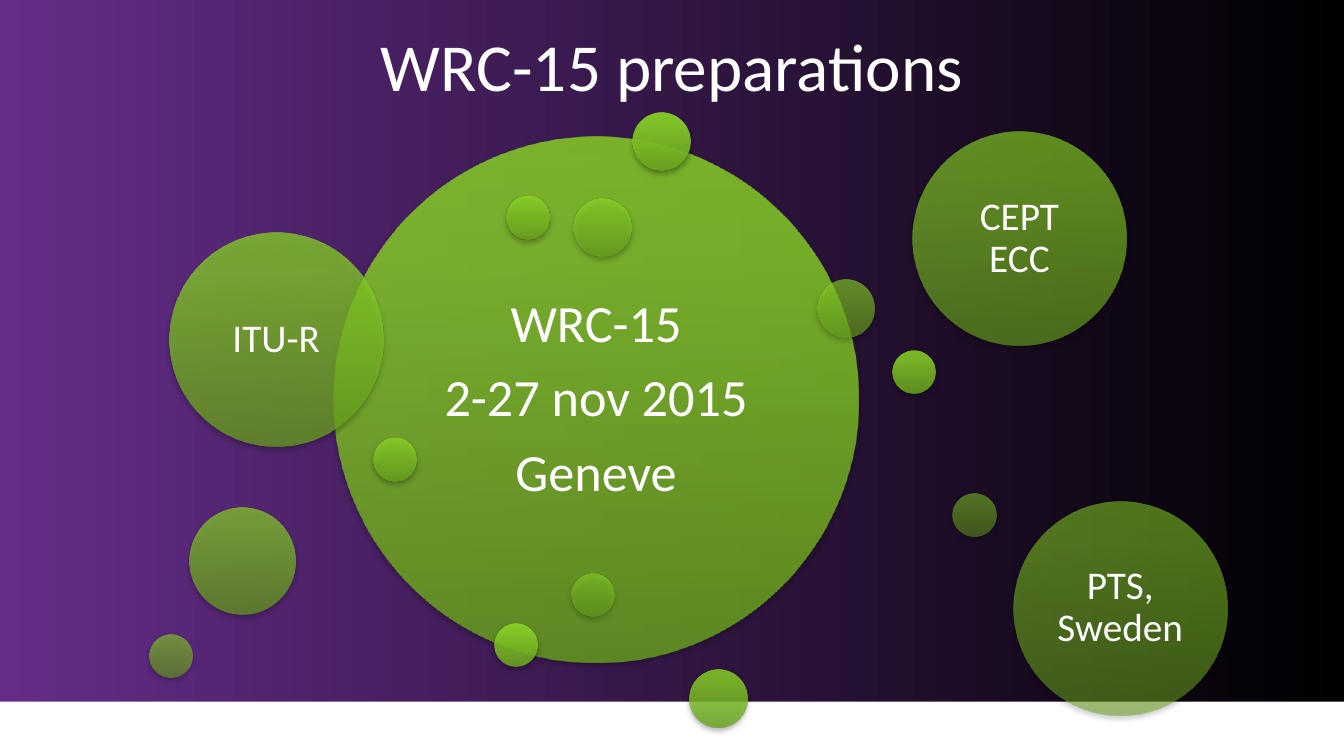
from pptx import Presentation
from pptx.dml.color import RGBColor
from pptx.enum.shapes import MSO_SHAPE
from pptx.enum.text import MSO_ANCHOR, PP_ALIGN
from pptx.oxml import parse_xml
from pptx.oxml.ns import nsdecls, qn
from pptx.util import Inches, Pt

OVAL, RECT = MSO_SHAPE.OVAL, MSO_SHAPE.RECTANGLE
CENTER, MIDDLE = PP_ALIGN.CENTER, MSO_ANCHOR.MIDDLE

WIDTH = Inches(10)
HEIGHT = WIDTH * 9 // 16
UNIT = WIDTH / 100  # the grid has 100 square columns
ROWS = HEIGHT / UNIT
FONT, WHITE = "Calibri", "FFFFFF"
GREENS = [(0, "6BA320"), (80, "8AD329"), (100, "8CD826")]
TINY, SMALL, MEDIUM, LARGE = 3.2, 4.3, 7.9, 15.9

HUB = (24.8, 10.2, 39.1)
HUB_ALPHA = 80
HUB_TEXT = ["WRC-15", "2-27 nov 2015", "Geneve"]

# column, row, size, text; they fade evenly from first to last
BUBBLES = [
    (47.1, 8.4, SMALL, ""),
    (36.8, 46.4, TINY, ""),
    (66.4, 26.1, TINY, ""),
    (51.3, 49.8, SMALL, ""),
    (37.7, 14.6, TINY, ""),
    (27.8, 32.6, TINY, ""),
    (12.6, 17.3, LARGE, "ITU-R"),
    (42.7, 14.8, SMALL, ""),
    (14.1, 37.8, MEDIUM, ""),
    (67.9, 9.8, LARGE, "CEPT ECC"),
    (60.8, 20.8, SMALL, ""),
    (11.1, 47.2, TINY, ""),
    (42.5, 42.7, TINY, ""),
    (75.4, 37.3, LARGE, "PTS, Sweden"),
    (70.9, 36.7, TINY, ""),
]
FADE = (90, 50)


def color(text):
    return RGBColor.from_string(text)


def grid(*cells):
    return [round(cell * UNIT) for cell in cells]


def write(frame, lines, size, inset):
    frame.word_wrap = True
    frame.margin_left = frame.margin_right = Inches(inset)
    frame.text = "\n".join(lines)
    for para in frame.paragraphs:
        para.alignment = CENTER
        for run in para.runs:
            run.font.size = Pt(size)
            run.font.name = FONT
            run.font.color.rgb = color(WHITE)


def shade(shape, alpha):
    """Give a bubble its see-through green gradient and soft shadow."""
    stops = "".join(
        f'<a:gs pos="{pos * 1000}"><a:srgbClr val="{tint}">'
        f'<a:alpha val="{round(alpha * 1000)}"/></a:srgbClr></a:gs>'
        for pos, tint in GREENS)
    shape.fill.gradient()
    props = shape._element.spPr
    props.replace(props.find(qn("a:gradFill")), parse_xml(
        f'<a:gradFill {nsdecls("a")} rotWithShape="1"><a:gsLst>{stops}</a:gsLst>'
        '<a:lin ang="16200000" scaled="0"/></a:gradFill>'))
    shape.line.fill.background()
    shape.shadow.inherit = False
    props.find(qn("a:effectLst")).append(parse_xml(
        f'<a:outerShdw {nsdecls("a")} blurRad="{Pt(3.1)}" dist="{Pt(1.8)}" '
        'dir="5400000" rotWithShape="0"><a:srgbClr val="000000">'
        '<a:alpha val="35000"/></a:srgbClr></a:outerShdw>'))


def bubble(slide, box, alpha, lines, size=21, inset=0.08):
    col, row, width = box
    shape = slide.shapes.add_shape(OVAL, *grid(col, row, width, width))
    shade(shape, alpha)
    if not lines:
        return
    frame = shape.text_frame
    write(frame, lines, size, inset)
    frame.vertical_anchor = MIDDLE
    for para in frame.paragraphs:
        para.line_spacing = 0.9
        para.space_after = Pt(0.35 * size)


def cluster(slide):
    bubble(slide, HUB, HUB_ALPHA, HUB_TEXT, 28, 0.12)
    first, last = FADE
    step = (last - first) / (len(BUBBLES) - 1)
    for i, (*box, text) in enumerate(BUBBLES):
        bubble(slide, box, first + i * step, [text] if text else [])


def backdrop(slide, band):
    fill = slide.background.fill
    fill.gradient()
    fill.gradient_angle = 0
    for stop, tint in zip(fill.gradient_stops, ("652D89", "000000")):
        stop.color.rgb = color(tint)
    strip = slide.shapes.add_shape(RECT, *grid(*band))
    strip.fill.solid()
    strip.fill.fore_color.rgb = color(WHITE)
    strip.line.fill.background()
    strip.shadow.inherit = False


def heading(slide, box, text):
    frame = slide.shapes.add_textbox(*grid(*box)).text_frame
    write(frame, [text], 36, 0.1)
    frame.paragraphs[0].line_spacing = Pt(32)


def main():
    deck = Presentation()
    deck.slide_width, deck.slide_height = WIDTH, HEIGHT
    slide = deck.slides.add_slide(deck.slide_layouts[6])
    backdrop(slide, (0, 52.2, 100, ROWS - 52.2))
    heading(slide, (5.9, 2.9, 88.2, 11), "WRC-15 preparations")
    cluster(slide)
    deck.save("out.pptx")


if __name__ == "__main__":
    main()
